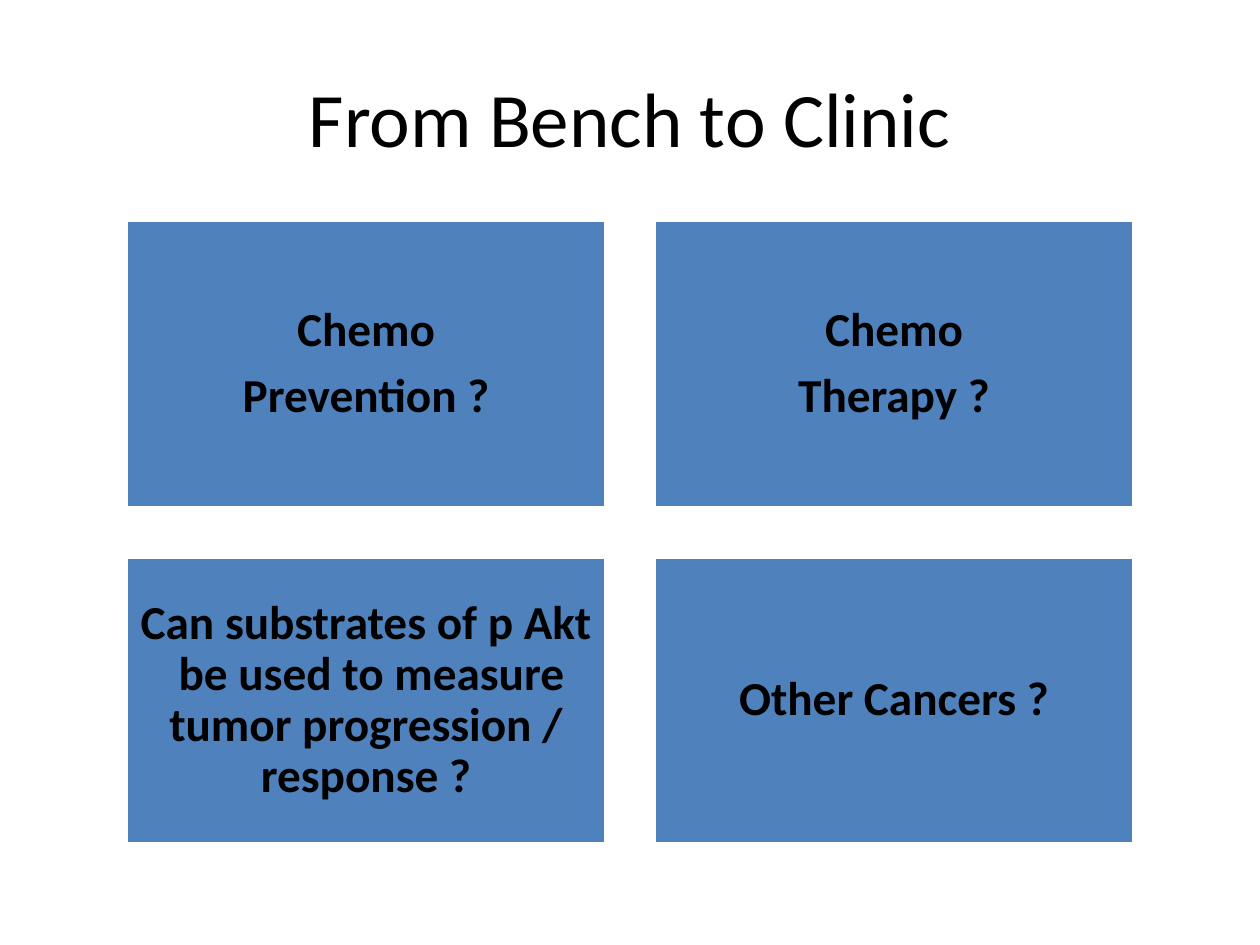
import pptx
import pptx.dml.color
import pptx.enum.shapes
import pptx.enum.text
import pptx.util
from pptx.util import Inches, Pt

BLACK = pptx.dml.color.RGBColor(0x00, 0x00, 0x00)
BLUE = pptx.dml.color.RGBColor(0x4F, 0x81, 0xBD)
WHITE = pptx.dml.color.RGBColor(0xFF, 0xFF, 0xFF)

TITLE = "From Bench to Clinic"
QUESTIONS = [
    ["Chemo", "Prevention ?"],
    ["Chemo", "Therapy ?"],
    ["Can substrates of p Akt  be used to measure tumor progression / response ?"],
    ["Other Cancers ?"],
]

COLUMNS = 2
LEFT, TOP = 1, 1.75
BOX_WIDTH, BOX_HEIGHT = 3.81, 2.28
COLUMN_STEP, ROW_STEP = 4.19, 2.67

TITLE_FONT = {"name": "Calibri", "size": Pt(44), "bold": False}
BOX_FONT = {"name": "Calibri", "size": Pt(27), "bold": True}
BOX_SPACING = {"line_spacing": 0.9, "space_after": Pt(9)}
BOX_MARGINS = {
    f"margin_{side}": Inches(0.11) for side in ("left", "top", "right", "bottom")
}


def set_attributes(target, values):
    for name, value in values.items():
        setattr(target, name, value)


def write_centred(shape, lines, font, spacing, margins):
    frame = shape.text_frame
    frame.word_wrap = True
    frame.vertical_anchor = pptx.enum.text.MSO_ANCHOR.MIDDLE
    set_attributes(frame, margins)
    frame.text = "\n".join(lines)
    for paragraph in frame.paragraphs:
        paragraph.alignment = pptx.enum.text.PP_ALIGN.CENTER
        set_attributes(paragraph, spacing)
        for run in paragraph.runs:
            set_attributes(run.font, font)
            run.font.color.rgb = BLACK


def add_question_box(slide, index, lines):
    row, column = divmod(index, COLUMNS)
    box = slide.shapes.add_shape(
        pptx.enum.shapes.MSO_SHAPE.RECTANGLE,
        Inches(LEFT + column * COLUMN_STEP),
        Inches(TOP + row * ROW_STEP),
        Inches(BOX_WIDTH),
        Inches(BOX_HEIGHT),
    )
    box.shadow.inherit = False
    box.fill.solid()
    box.fill.fore_color.rgb = BLUE
    box.line.color.rgb = WHITE
    box.line.width = Pt(2)
    write_centred(box, lines, BOX_FONT, BOX_SPACING, BOX_MARGINS)


def main():
    presentation = pptx.Presentation()
    presentation.slide_width = Inches(10)
    presentation.slide_height = Inches(7.5)
    slide = presentation.slides.add_slide(presentation.slide_layouts[6])

    title = slide.shapes.add_textbox(Inches(0.5), Inches(0.3), Inches(9), Inches(1.25))
    write_centred(title, [TITLE], TITLE_FONT, {}, {})
    for index, lines in enumerate(QUESTIONS):
        add_question_box(slide, index, lines)

    presentation.save("out.pptx")


if __name__ == "__main__":
    main()
